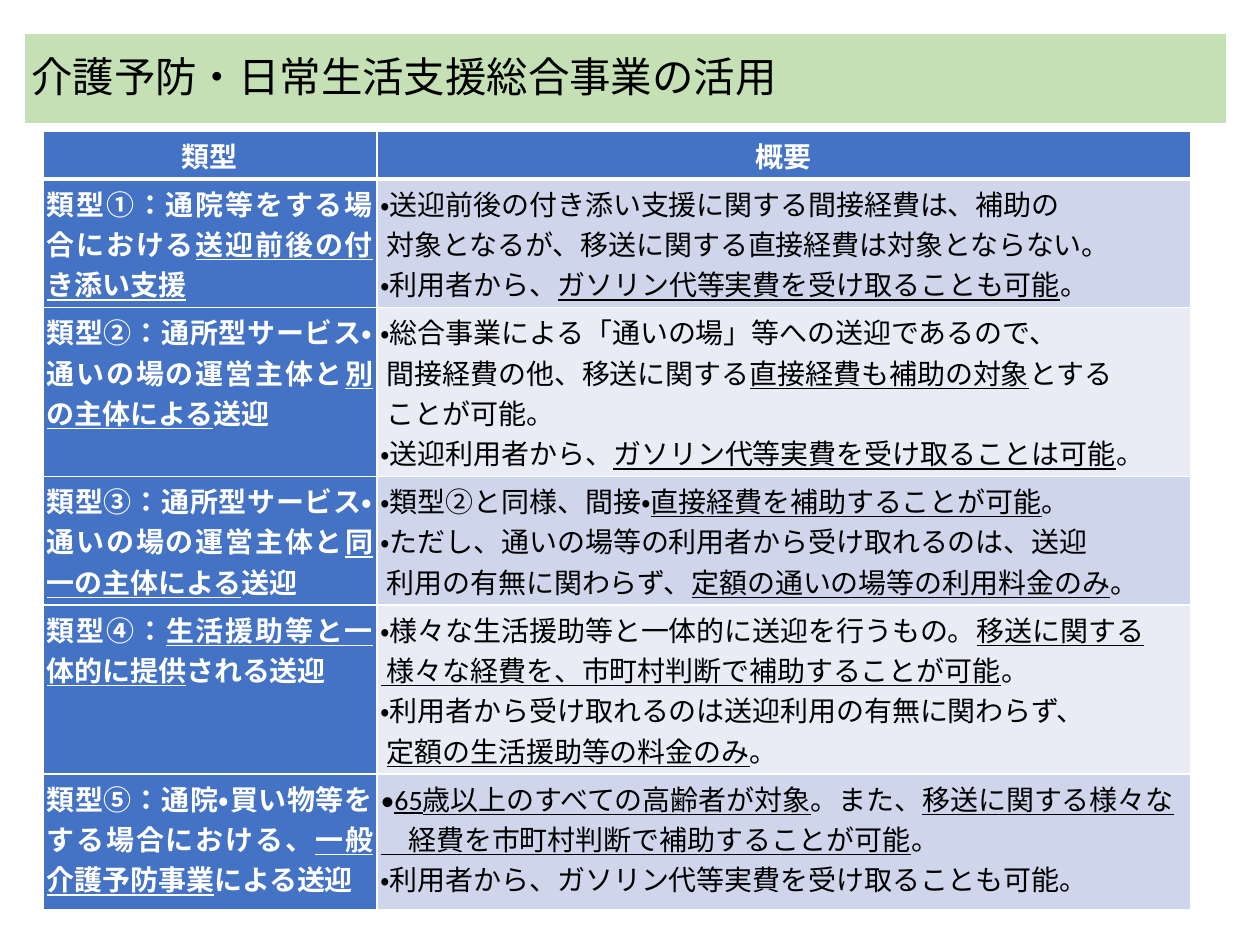
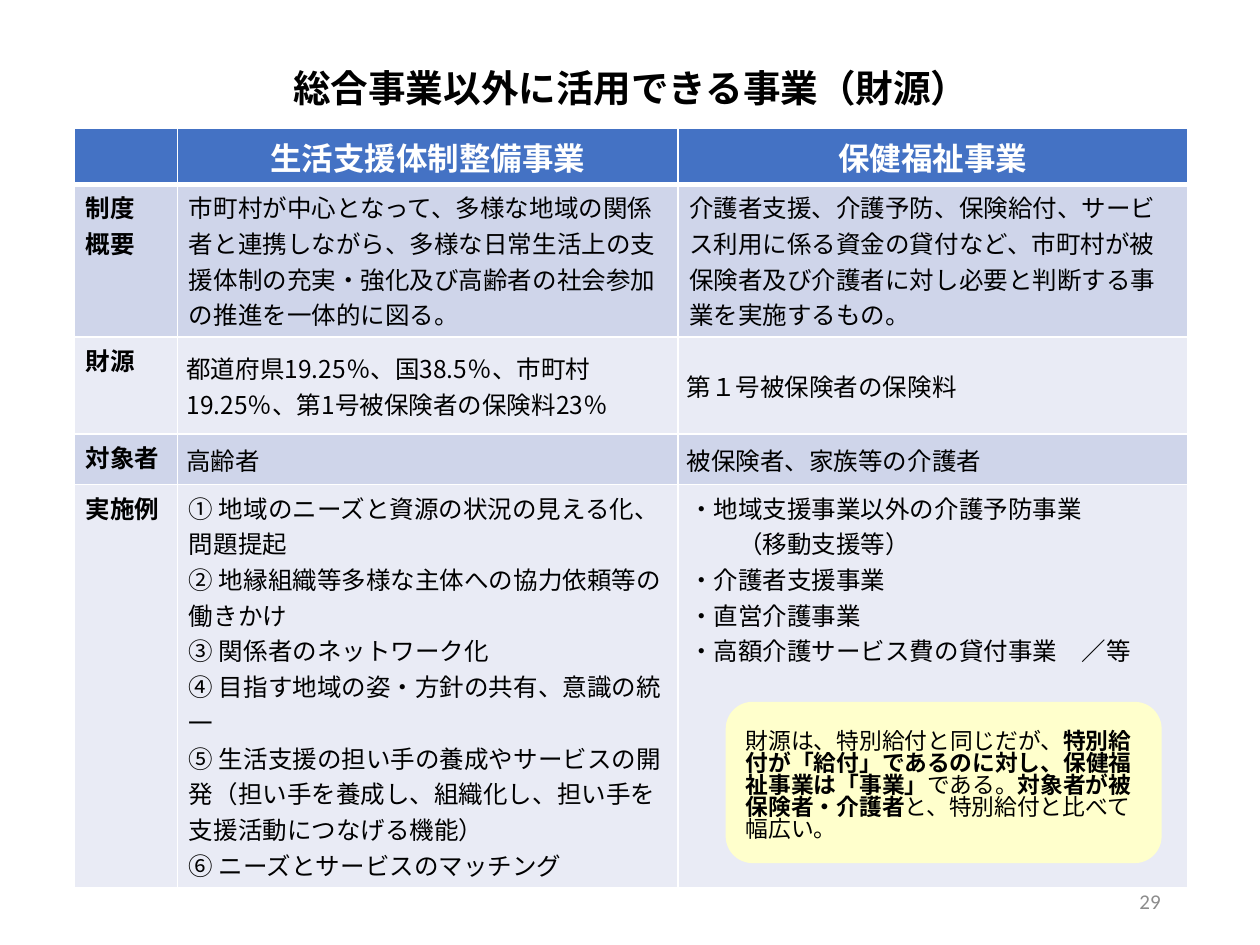
from lxml import etree
from pptx import Presentation
from pptx.dml.color import RGBColor
from pptx.enum.lang import MSO_LANGUAGE_ID
from pptx.enum.shapes import MSO_SHAPE
from pptx.enum.text import MSO_ANCHOR, MSO_AUTO_SIZE, PP_ALIGN
from pptx.oxml.ns import qn
from pptx.util import Inches, Pt

LEFT, MID, RIGHT, FULL = PP_ALIGN.LEFT, PP_ALIGN.CENTER, PP_ALIGN.RIGHT, PP_ALIGN.JUSTIFY
TOP, CENTER, BOTTOM = MSO_ANCHOR.TOP, MSO_ANCHOR.MIDDLE, MSO_ANCHOR.BOTTOM
FIXED, SHRINK = MSO_AUTO_SIZE.NONE, MSO_AUTO_SIZE.TEXT_TO_FIT_SHAPE
ROUND = MSO_SHAPE.ROUNDED_RECTANGLE
JAPAN = MSO_LANGUAGE_ID.JAPANESE

COLORS = {
    "head": "4472C4", "dark": "CFD5EA", "light": "E9EBF5", "band": "C5E0B4",
    "note": "FFFFCC", "white": "FFFFFF", "black": "000000", "gray": "8C8C8C",
}
LATIN, NOTO = "Calibri", "Noto Sans CJK JP"

TYPES = [
    ("類型①：通院等をする場合における_送迎前後の付き添い支援_",
     ["•送迎前後の付き添い支援に関する間接経費は、補助の",
      " 対象となるが、移送に関する直接経費は対象とならない。",
      "•利用者から、_ガソリン代等実費を受け取ることも可能_。"]),
    ("類型②：通所型サービス•通いの場の運営主体と_別の主体による_送迎",
     ["•総合事業による「通いの場」等への送迎であるので、",
      " 間接経費の他、移送に関する_直接経費も補助の対象_とする",
      " ことが可能。",
      "•送迎利用者から、_ガソリン代等実費を受け取ることは可能_。"]),
    ("類型③：通所型サービス•通いの場の運営主体と_同一の主体による_送迎",
     ["•類型②と同様、間接•_直接経費を補助することが可能_。",
      "•ただし、通いの場等の利用者から受け取れるのは、送迎",
      " 利用の有無に関わらず、_定額の通いの場等の利用料金のみ_。"]),
    ("類型④：_生活援助等と一体的に提供_される送迎",
     ["•様々な生活援助等と一体的に送迎を行うもの。_移送に関する_",
      "_ 様々な経費を、市町村判断で補助することが可能_。",
      "•利用者から受け取れるのは送迎利用の有無に関わらず、",
      " _定額の生活援助等の料金のみ_。"]),
    ("類型⑤：通院•買い物等をする場合における、_一般介護予防事業_による送迎",
     ["•_65歳以上のすべての高齢者が対象_。また、_移送に関する様々な_",
      "_　経費を市町村判断で補助することが可能_。",
      "•利用者から、ガソリン代等実費を受け取ることも可能。"]),
]

FUNDS = [
    ("制度\n概要",
     ["市町村が中心となって、多様な地域の関係者と連携しながら、多様な日常生活上の"
      "支援体制の充実・強化及び高齢者の社会参加の推進を一体的に図る。"],
     ["介護者支援、介護予防、保険給付、サービス利用に係る資金の貸付など、"
      "市町村が被保険者及び介護者に対し必要と判断する事業を実施するもの。"]),
    ("財源",
     ["都道府県19.25％、国38.5％、市町村19.25％、第1号被保険者の保険料23％"],
     ["第１号被保険者の保険料"]),
    ("対象者", ["高齢者"], ["被保険者、家族等の介護者"]),
    ("実施例",
     ["① 地域のニーズと資源の状況の見える化、問題提起",
      "② 地縁組織等多様な主体への協力依頼等の働きかけ",
      "③ 関係者のネットワーク化",
      "④ 目指す地域の姿・方針の共有、意識の統一",
      "⑤ 生活支援の担い手の養成やサービスの開発（担い手を養成し、組織化し、"
      "担い手を支援活動につなげる機能）",
      "⑥ ニーズとサービスのマッチング"],
     ["・地域支援事業以外の介護予防事業",
      "　　（移動支援等）",
      "・介護者支援事業",
      "・直営介護事業",
      "・高額介護サービス費の貸付事業　／等"]),
]

NOTE = ("財源は、特別給付と同じだが、*特別給付が「給付」であるのに対し、"
        "保健福祉事業は「事業」*である。*対象者が被保険者・介護者*と、特別給付と比べて幅広い。")


def paint(fill, name):
    fill.solid()
    fill.fore_color.rgb = RGBColor.from_string(COLORS[name])


def write(frame, lines, size, face=NOTO, color="black", bold=False, align=LEFT, lead=None):
    for index, line in enumerate(lines):
        par = frame.add_paragraph() if index else frame.paragraphs[0]
        par.alignment = align
        if lead:
            par.line_spacing = lead
        mark = "*" if "*" in line else "_"
        for turn, part in enumerate(line.split(mark)):
            for row, text in enumerate(part.split("\n")):
                if row:
                    par.add_line_break()
                if text:
                    run = par.add_run()
                    run.text = text
                    font = run.font
                    font.size = Pt(size)
                    font.bold = bold or (mark == "*" and turn % 2 == 1)
                    font.underline = mark == "_" and turn % 2 == 1
                    font.language_id = JAPAN
                    font.color.rgb = RGBColor.from_string(COLORS[color])
                    font.name = face
                    etree.SubElement(font._element, qn("a:ea"), typeface=NOTO)


def inset(item, wide, high):
    item.margin_left = item.margin_right = Inches(wide)
    item.margin_top = item.margin_bottom = Inches(high)


def place(shape, box):
    shape.left, shape.top, shape.width, shape.height = map(Inches, box)


def title(slide, box, text, size, anchor, wide, **style):
    shape = slide.shapes.title
    place(shape, box)
    frame = shape.text_frame
    frame.auto_size = FIXED
    frame.word_wrap = True
    frame.vertical_anchor = anchor
    inset(frame, wide, 0.03)
    write(frame, [text], size, lead=0.9, **style)
    return shape


def edge(cell, row):
    props = cell._tc.get_or_add_tcPr()
    widths = {"L": 1, "R": 1, "T": 3 if row == 1 else 1, "B": 1 if row else 3}
    for index, (side, width) in enumerate(widths.items()):
        line = etree.Element(qn("a:ln" + side), w=str(Pt(width)))
        fill = etree.SubElement(line, qn("a:solidFill"))
        etree.SubElement(fill, qn("a:srgbClr"), val=COLORS["white"])
        props.insert(index, line)


def grid(slide, box, cols, rows, side=False):
    table = slide.shapes.add_table(len(rows), len(cols), *map(Inches, box)).table
    table.horz_banding = False
    for col, width in zip(table.columns, cols):
        col.width = Inches(width)
    for row, height in enumerate(rows):
        table.rows[row].height = Inches(height)
        for col in range(len(cols)):
            cell = table.cell(row, col)
            head = row == 0 or (side and col == 0)
            paint(cell.fill, "head" if head else "dark" if row % 2 else "light")
            edge(cell, row)
    return table


def fill(cell, lines, size, anchor=TOP, pad=(0.09, 0.04), **style):
    cell.vertical_anchor = anchor
    inset(cell, *pad)
    write(cell.text_frame, lines, size, **style)


def types(slide, box):
    table = grid(slide, box, [2.65, 6.46], [0.35, 0.94, 1.24, 0.92, 1.33, 1.08], side=True)
    base = {"size": 16, "face": LATIN, "pad": (0.03, 0.03)}
    white = {"color": "white", "bold": True}
    for col, text in enumerate(["類型", "概要"]):
        fill(table.cell(0, col), [text], anchor=CENTER, align=MID, **base, **white)
    for row, (kind, lines) in enumerate(TYPES, 1):
        fill(table.cell(row, 0), [kind], align=FULL, **base, **white)
        fill(table.cell(row, 1), lines, align=FULL, **base)


def funds(slide, box):
    table = grid(slide, box, [0.82, 3.97, 4.05], [0.44, 1.17, 0.77, 0.4, 2.76])
    for col, text in enumerate(["生活支援体制整備事業", "保健福祉事業"], 1):
        fill(table.cell(0, col), [text], 18, CENTER, color="white", bold=True, align=MID)
    for row, (name, *texts) in enumerate(FUNDS, 1):
        fill(table.cell(row, 0), [name], 14, bold=True)
        for col, lines in enumerate(texts, 1):
            pad = (0.07, 0) if row in (2, 3) else (0.09, 0.04)
            fill(table.cell(row, col), lines, 14, TOP if row == 4 else CENTER, pad)
    for par in table.cell(4, 2).text_frame.paragraphs:
        props = par._p.get_or_add_pPr()
        props.set("marL", str(Inches(0.08)))
        props.set("indent", str(Inches(-0.08)))


def note(slide, box):
    shape = slide.shapes.add_shape(ROUND, *map(Inches, box))
    shape.shadow.inherit = False
    paint(shape.fill, "note")
    shape.line.fill.background()
    frame = shape.text_frame
    frame.word_wrap = True
    frame.auto_size = SHRINK
    frame.vertical_anchor = CENTER
    write(frame, [NOTE], 14)


def folio(slide, box, text):
    frame = slide.shapes.add_textbox(*map(Inches, box)).text_frame
    frame.word_wrap = True
    frame.vertical_anchor = CENTER
    write(frame, [text], 12, LATIN, "gray", align=RIGHT)


def first(slide):
    band = title(slide, (0.19, 0.26, 9.55, 0.73), "介護予防・日常生活支援総合事業の活用",
                 23.7, CENTER, 0.06)
    paint(band.fill, "band")
    paint(band.line.fill, "white")
    band.line.width = Pt(1.5)
    types(slide, (0.34, 1.04, 9.11, 5.86))


def second(slide):
    title(slide, (0.51, 0.29, 9, 0.62), "総合事業以外に活用できる事業（財源）",
          21.5, BOTTOM, 0.07, bold=True, align=MID)
    funds(slide, (0.59, 1.02, 8.84, 5.54))
    note(slide, (5.76, 5.57, 3.46, 1.28))
    folio(slide, (7.06, 6.95, 2.25, 0.4), "29")


def main():
    deck = Presentation()
    deck.slide_width, deck.slide_height = Inches(10), Inches(7.5)
    for build in (first, second):
        build(deck.slides.add_slide(deck.slide_layouts[5]))
    deck.save("out.pptx")


if __name__ == "__main__":
    main()
